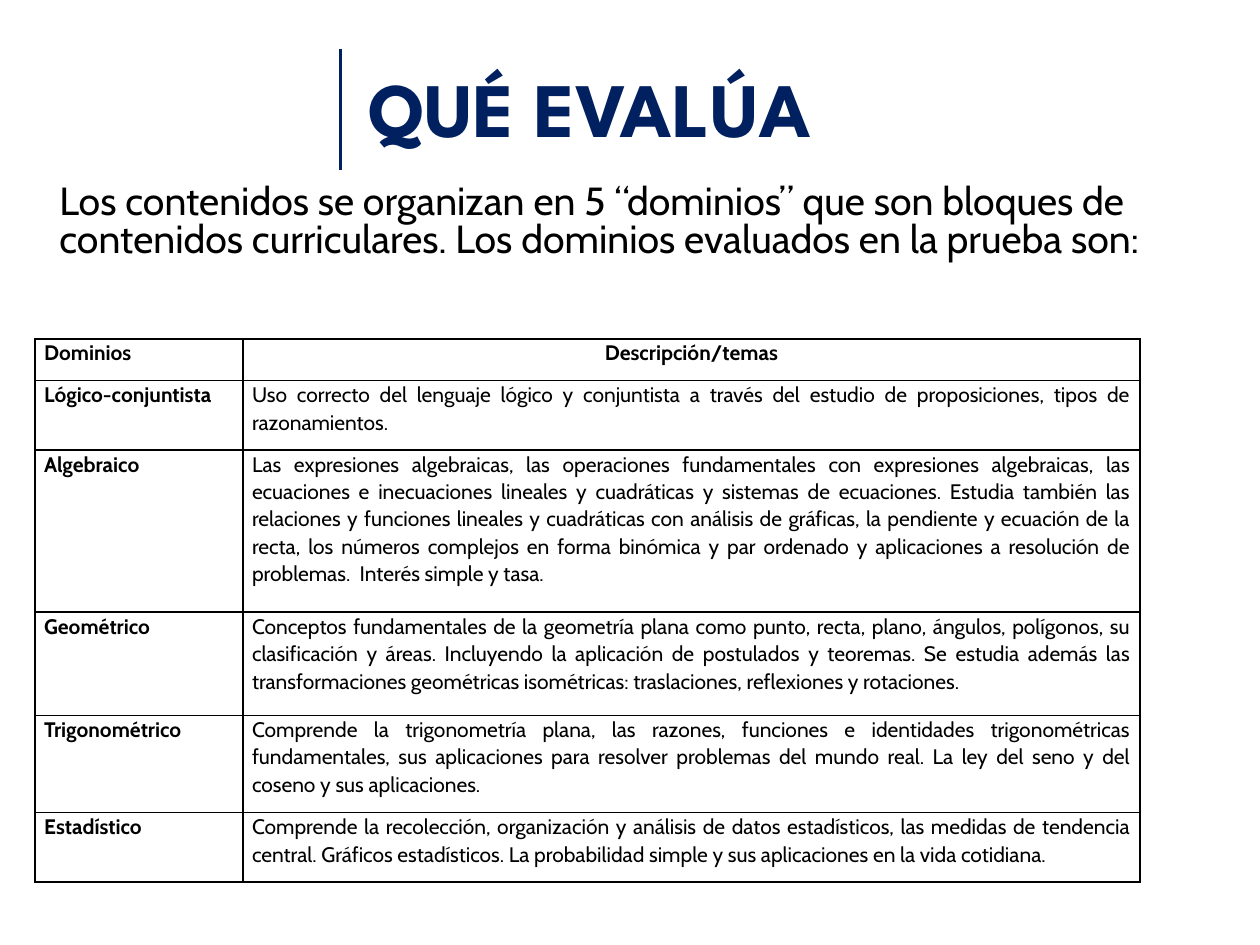
from lxml import etree
from pptx import Presentation
from pptx.dml.color import RGBColor
from pptx.enum.shapes import MSO_CONNECTOR
from pptx.enum.text import MSO_ANCHOR, PP_ALIGN
from pptx.oxml.ns import qn
from pptx.util import Cm, Pt

TITLE = "QUÉ EVALÚA"
INTRO = (
    "Los contenidos se organizan en 5 “dominios” que son bloques de contenidos "
    "curriculares. Los dominios evaluados en la prueba son:"
)
ROWS = [
    (0.84, "Dominios", "Descripción/temas"),
    (1.4, "Lógico-conjuntista",
     "Uso correcto del lenguaje lógico y conjuntista a través del estudio de "
     "proposiciones, tipos de razonamientos."),
    (3.27, "Algebraico",
     "Las expresiones algebraicas, las operaciones fundamentales con expresiones "
     "algebraicas, las ecuaciones e inecuaciones lineales y cuadráticas y sistemas "
     "de ecuaciones. Estudia también las relaciones y funciones lineales y "
     "cuadráticas con análisis de gráficas, la pendiente y ecuación de la recta, "
     "los números complejos en forma binómica y par ordenado y aplicaciones a "
     "resolución de problemas.  Interés simple y tasa."),
    (2.08, "Geométrico",
     "Conceptos fundamentales de la geometría plana como punto, recta, plano, "
     "ángulos, polígonos, su clasificación y áreas. Incluyendo la aplicación de "
     "postulados y teoremas. Se estudia además las transformaciones geométricas "
     "isométricas: traslaciones, reflexiones y rotaciones."),
    (1.96, "Trigonométrico",
     "Comprende la trigonometría plana, las razones, funciones e identidades "
     "trigonométricas fundamentales, sus aplicaciones para resolver problemas del "
     "mundo real. La ley del seno y del coseno y sus aplicaciones."),
    (1.4, "Estadístico",
     "Comprende la recolección, organización y análisis de datos estadísticos, las "
     "medidas de tendencia central. Gráficos estadísticos. La probabilidad simple "
     "y sus aplicaciones en la vida cotidiana."),
]
COLS = (4.19, 18.08)

NAVY = RGBColor(0x00, 0x20, 0x60)
BLACK = RGBColor(0, 0, 0)
HEAD, BODY = "League Spartan", "Cabin"
LEFT, CENTER, JUST = PP_ALIGN.LEFT, PP_ALIGN.CENTER, PP_ALIGN.JUSTIFY
TOP, MIDDLE = MSO_ANCHOR.TOP, MSO_ANCHOR.MIDDLE
STRAIGHT = MSO_CONNECTOR.STRAIGHT


def style(par, text, face, size, color, bold=False, align=LEFT):
    par.text = text
    par.alignment = align
    font = par.font
    font.name, font.size, font.bold = face, Pt(size), bold
    font.color.rgb = color


def add_text(slide, box, text, anchor, face, size, color, bold=False):
    frame = slide.shapes.add_textbox(*map(Cm, box)).text_frame
    frame.word_wrap = True
    frame.vertical_anchor = anchor
    frame.margin_left = frame.margin_right = Cm(0.13)
    frame.margin_top = frame.margin_bottom = Cm(0.13)
    par = frame.paragraphs[0]
    style(par, text, face, size, color, bold)
    return par


def add_edges(cell):
    props = cell._tc.get_or_add_tcPr()
    for i, side in enumerate(("lnL", "lnR", "lnT", "lnB")):
        edge = etree.Element(qn("a:" + side), w=str(Pt(1)))
        fill = etree.SubElement(edge, qn("a:solidFill"))
        etree.SubElement(fill, qn("a:srgbClr"), val=str(BLACK))
        props.insert(i, edge)


def add_grid(slide):
    high = sum(row[0] for row in ROWS)
    table = slide.shapes.add_table(
        len(ROWS), len(COLS), Cm(0.71), Cm(6.83), Cm(sum(COLS)), Cm(high)
    ).table
    table.horz_banding = False
    for col, width in zip(table.columns, COLS):
        col.width = Cm(width)
    for r, (height, *texts) in enumerate(ROWS):
        table.rows[r].height = Cm(height)
        for c, text in enumerate(texts):
            cell = table.cell(r, c)
            cell.fill.background()
            cell.margin_left = cell.margin_right = Cm(0.18)
            cell.margin_top = cell.margin_bottom = 0
            par = cell.text_frame.paragraphs[0]
            align = CENTER if r == 0 and c == 1 else JUST
            style(par, text, BODY, 12, BLACK, r == 0 or c == 0, align)
            par.line_spacing = 1.07
            par.space_after = Pt(8)
            add_edges(cell)


def main():
    deck = Presentation()
    deck.slide_width, deck.slide_height = Cm(25.4), Cm(19.05)
    slide = deck.slides.add_slide(deck.slide_layouts[6])

    bar = slide.shapes.add_connector(STRAIGHT, Cm(6.86), Cm(0.99), Cm(6.86), Cm(3.43))
    bar.line.color.rgb = NAVY
    bar.line.width = Pt(2)
    etree.SubElement(bar._element.spPr, qn("a:effectLst"))

    add_text(slide, (7.29, 0.94, 16.71, 2.44), TITLE, MIDDLE, HEAD, 44, NAVY, True)
    intro = add_text(slide, (1.07, 3.61, 23.29, 2.46), INTRO, TOP, BODY, 22.4, BLACK)
    intro.line_spacing = 0.8
    intro.space_before = Pt(7)
    add_grid(slide)
    deck.save("out.pptx")


if __name__ == "__main__":
    main()
